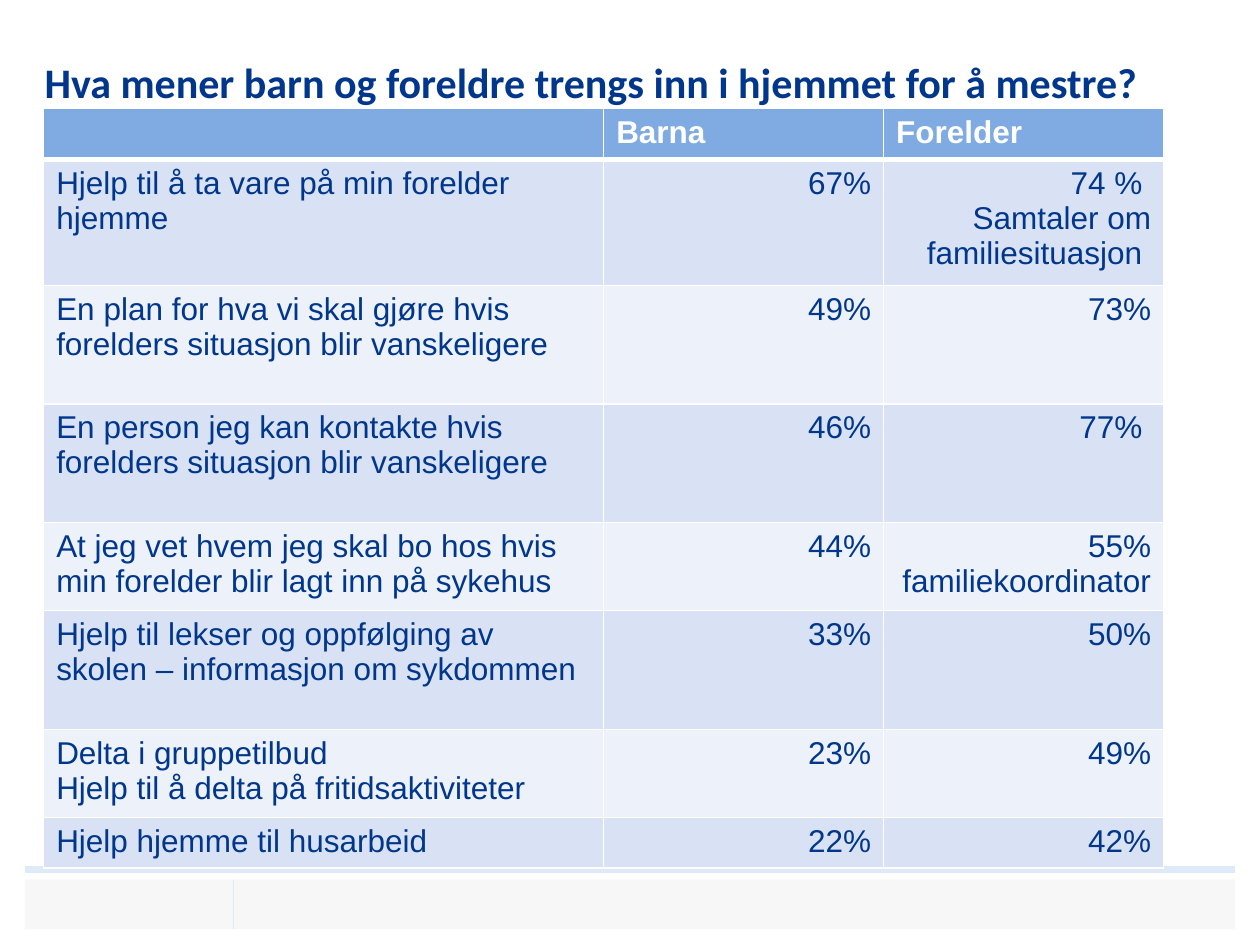
from lxml import etree
from pptx import Presentation
from pptx.dml.color import RGBColor
from pptx.enum.shapes import MSO_CONNECTOR, MSO_SHAPE
from pptx.enum.text import MSO_ANCHOR, PP_ALIGN
from pptx.oxml.ns import qn
from pptx.util import Cm, Pt

STRAIGHT = MSO_CONNECTOR.STRAIGHT
RECTANGLE = MSO_SHAPE.RECTANGLE
TOP = MSO_ANCHOR.TOP
LEFT, RIGHT = PP_ALIGN.LEFT, PP_ALIGN.RIGHT

NAVY = RGBColor(0x00, 0x36, 0x8B)
WHITE = RGBColor(0xFF, 0xFF, 0xFF)
HEADER_BLUE = RGBColor(0x7F, 0xAA, 0xE2)
BAND_DARK = RGBColor(0xD8, 0xE2, 0xF4)
BAND_LIGHT = RGBColor(0xEC, 0xF1, 0xFA)
RULE_BLUE = RGBColor(0xDF, 0xEA, 0xF8)
FOOTER_GREY = RGBColor(0xF7, 0xF7, 0xF7)

TITLE = "Hva mener barn og foreldre trengs inn i hjemmet for å mestre?"
COLUMN_SHARES = (0.5, 0.25, 0.25)
NEEDS = [
    (1.02, "", "Barna", "Forelder"),
    (2.54, "Hjelp til å ta vare på min forelder hjemme", "67%",
     "74 % \nSamtaler om familiesituasjon "),
    (2.39, "En plan for hva vi skal gjøre hvis forelders situasjon blir vanskeligere",
     "49%", "73%"),
    (2.39, "En person jeg kan kontakte hvis forelders situasjon blir vanskeligere",
     "46%", "77% "),
    (1.78, "At jeg vet hvem jeg skal bo hos hvis min forelder blir lagt inn på sykehus",
     "44%", "55% familiekoordinator"),
    (2.39, "Hjelp til lekser og oppfølging av skolen – informasjon om sykdommen",
     "33%", "50%"),
    (1.78, "Delta i gruppetilbud\nHjelp til å delta på fritidsaktiviteter", "23%", "49%"),
    (1.02, "Hjelp hjemme til husarbeid", "22%", "42%"),
]


def write_text(frame, text, font_name, size, color, bold=False, align=LEFT):
    """Write each line of the text as a paragraph with one run."""
    for index, line in enumerate(text.split("\n")):
        paragraph = frame.add_paragraph() if index else frame.paragraphs[0]
        paragraph.alignment = align
        run = paragraph.add_run()
        run.text = line
        run.font.name = font_name
        run.font.size = Pt(size)
        run.font.bold = bold
        run.font.color.rgb = color


def add_rule(slide, x1, y1, x2, y2, weight):
    """Draw a pale blue straight line without a shadow."""
    rule = slide.shapes.add_connector(STRAIGHT, Cm(x1), Cm(y1), Cm(x2), Cm(y2))
    rule.line.color.rgb = RULE_BLUE
    rule.line.width = Pt(weight)
    etree.SubElement(rule._element.spPr, qn("a:effectLst"))


def add_footer(slide, left, top, width, height):
    """Place the grey footer band with its upper rule and divider."""
    band = slide.shapes.add_shape(RECTANGLE, Cm(left), Cm(top), Cm(width), Cm(height))
    band.shadow.inherit = False
    band.fill.solid()
    band.fill.fore_color.rgb = FOOTER_GREY
    band.line.fill.background()
    add_rule(slide, left, top - 0.2, left + width, top - 0.2, 4)
    divider = left + 4.2
    add_rule(slide, divider, top, divider, top + height, 0.5)


def add_title(slide, left, top, width, height):
    """Place the slide heading."""
    heading = slide.shapes.add_textbox(Cm(left), Cm(top), Cm(width), Cm(height))
    frame = heading.text_frame
    frame.word_wrap = True
    frame.vertical_anchor = TOP
    frame.margin_left = frame.margin_right = frame.margin_top = frame.margin_bottom = 0
    write_text(frame, TITLE, "Calibri", 24, NAVY, bold=True)


def set_borders(cell, top_weight, bottom_weight):
    """Give a cell white borders on all four sides."""
    properties = cell._tc.get_or_add_tcPr()
    weights = {"a:lnL": 1, "a:lnR": 1, "a:lnT": top_weight, "a:lnB": bottom_weight}
    for side, weight in weights.items():
        border = etree.SubElement(properties, qn(side), w=str(Pt(weight)))
        fill = etree.SubElement(border, qn("a:solidFill"))
        etree.SubElement(fill, qn("a:srgbClr"), val=str(WHITE))


def add_needs_table(slide, left, top, width):
    """Place the table comparing the answers of children and parents."""
    height = sum(need[0] for need in NEEDS)
    table = slide.shapes.add_table(
        len(NEEDS), len(COLUMN_SHARES), Cm(left), Cm(top), Cm(width), Cm(height)).table
    for column, share in zip(table.columns, COLUMN_SHARES):
        column.width = Cm(width * share)
    for row_index, (row_height, *texts) in enumerate(NEEDS):
        table.rows[row_index].height = Cm(row_height)
        header = row_index == 0
        band = HEADER_BLUE if header else BAND_DARK if row_index % 2 else BAND_LIGHT
        for column_index, text in enumerate(texts):
            cell = table.cell(row_index, column_index)
            set_borders(cell, 3 if row_index == 1 else 1, 3 if header else 1)
            cell.fill.solid()
            cell.fill.fore_color.rgb = band
            if text:
                align = LEFT if header or column_index == 0 else RIGHT
                write_text(cell.text_frame, text, "Arial", 18,
                           WHITE if header else NAVY, header, align)


def main():
    """Build the slide and save it."""
    presentation = Presentation()
    presentation.slide_width, presentation.slide_height = Cm(25.4), Cm(19.05)
    slide = presentation.slides.add_slide(presentation.slide_layouts[6])
    add_footer(slide, 0.5, 17.73, 24.4, 1)
    add_title(slide, 0.9, 1.14, 22.6, 1.88)
    add_needs_table(slide, 0.88, 2.19, 22.58)
    presentation.save("out.pptx")


if __name__ == "__main__":
    main()
